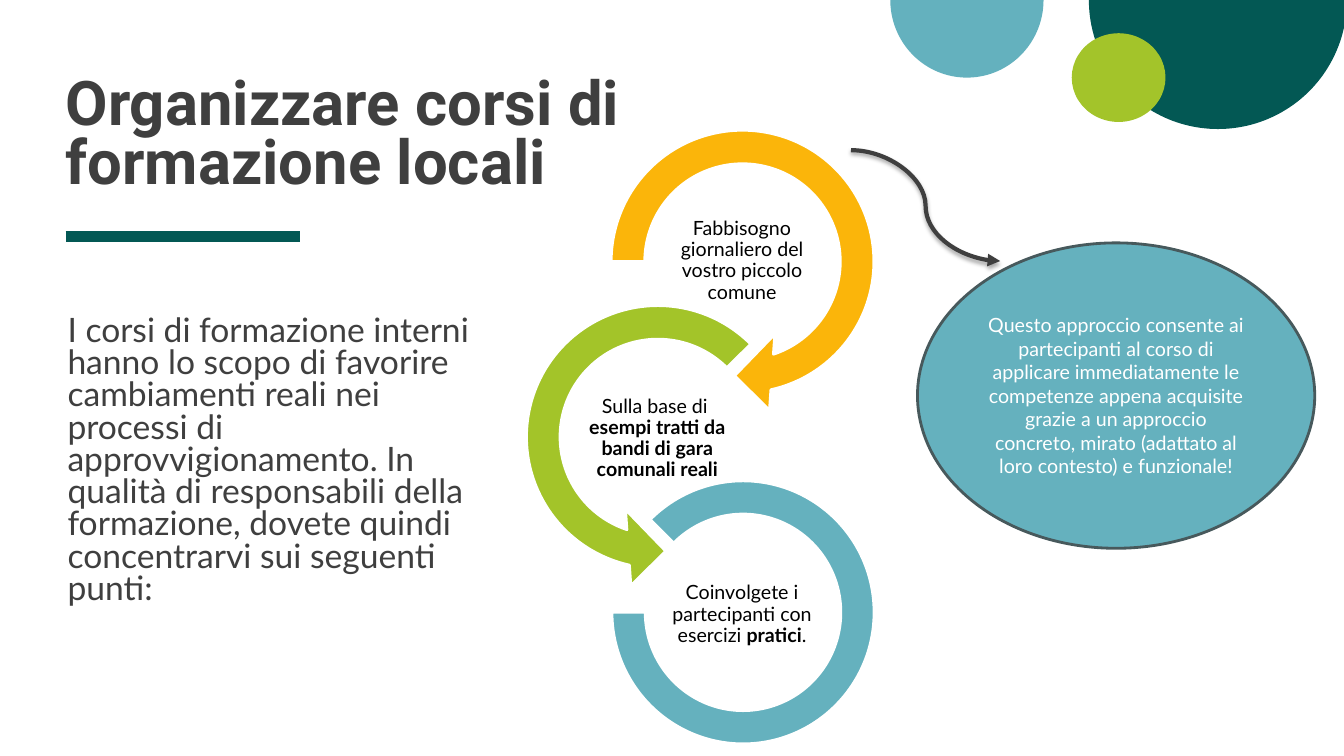
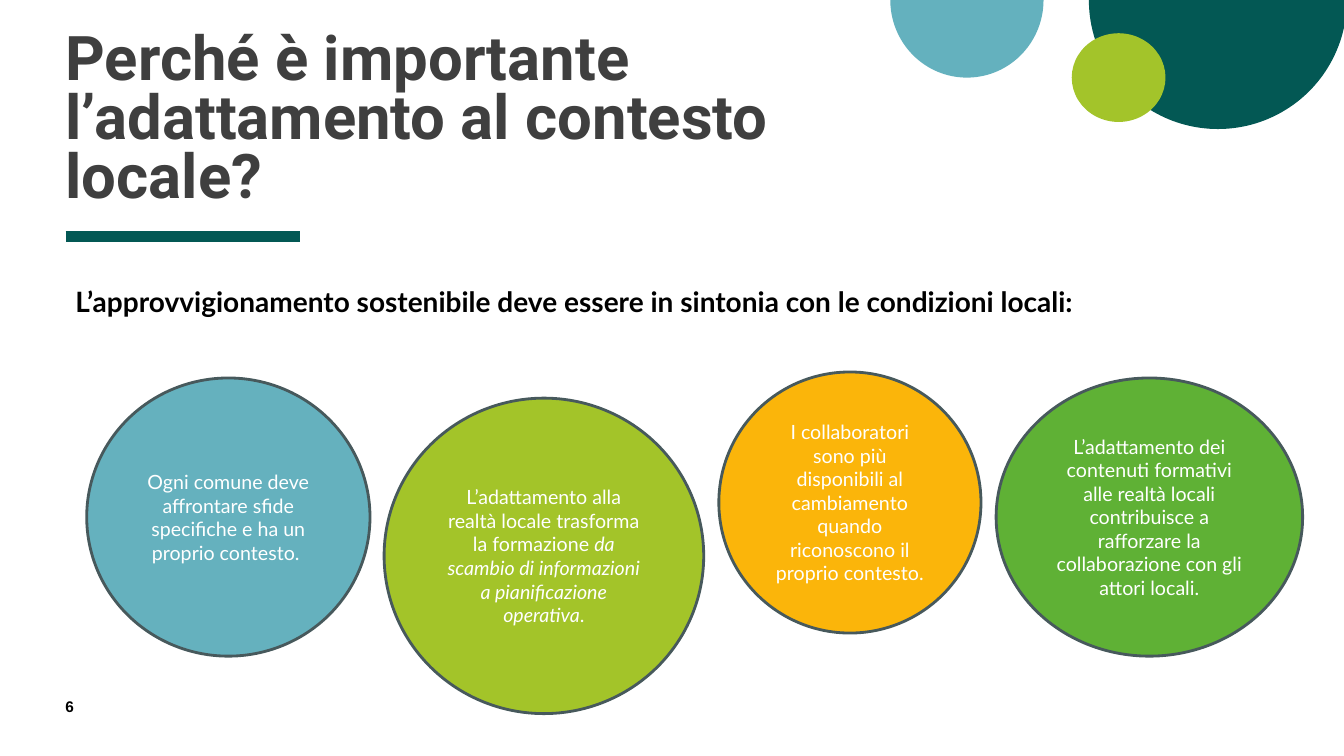
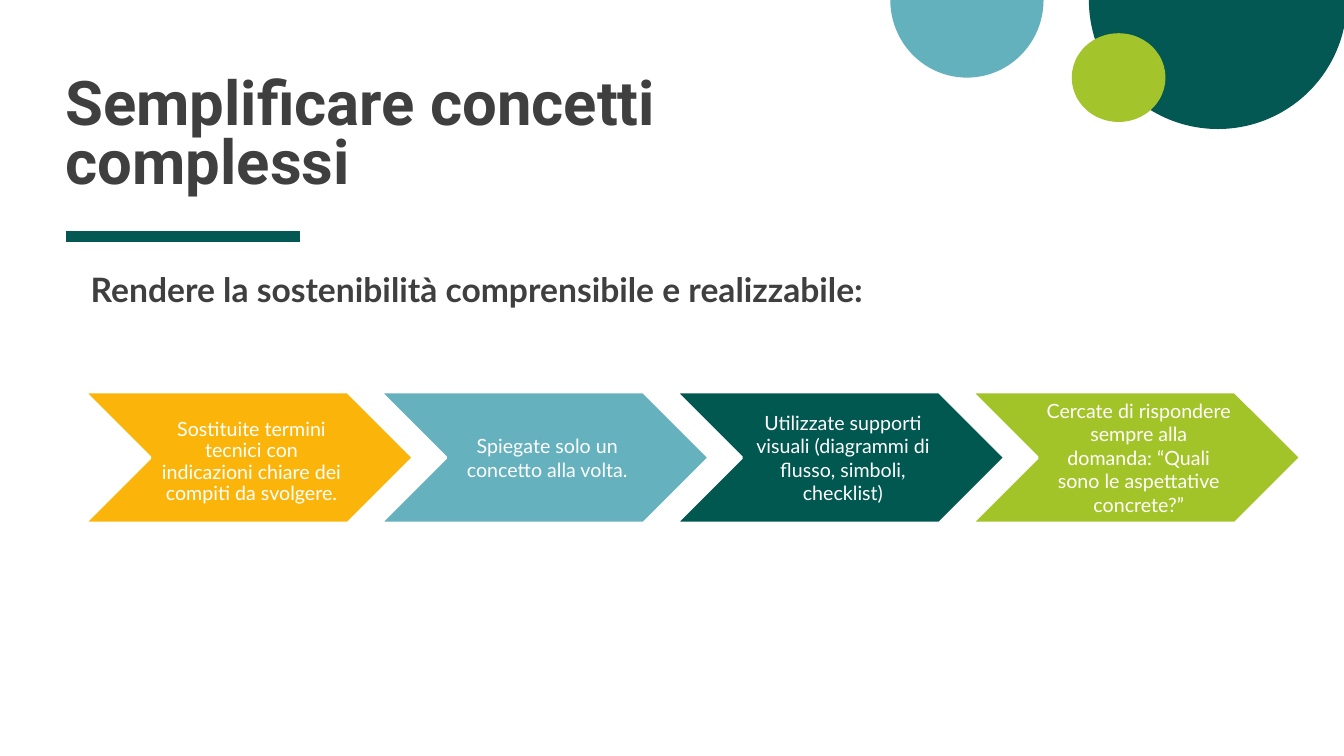
from lxml import etree
from pptx import Presentation
from pptx import util as u
from pptx.dml.color import RGBColor
from pptx.enum import shapes, text
from pptx.oxml.ns import qn

I = u.Inches
G = shapes.MSO_SHAPE
CENTER = text.PP_ALIGN.CENTER
MIDDLE = text.MSO_ANCHOR.MIDDLE
BOTTOM = text.MSO_ANCHOR.BOTTOM
C = {
    "pine": "035854", "sky": "64B1BE", "lime": "A3C42A",
    "dark": "3F3F3F", "black": "000000", "white": "FFFFFF",
    "amber": "FBB50A", "teal": "65B1BE", "olive": "A3C429",
    "green": "5FB135", "forest": "005851", "slate": "47595C",
}


def rgb(name):
    return RGBColor.from_string(C[name])


def write(sp, runs, size, color="dark", font="Lato", bold=None, align=None,
          anchor=text.MSO_ANCHOR.TOP, spacing=None, insets=(0, 0, 0, 0)):
    tf = sp.text_frame
    tf.word_wrap = True
    tf.vertical_anchor = anchor
    tf.margin_left, tf.margin_top, tf.margin_right, tf.margin_bottom = map(I, insets)
    p = tf.paragraphs[0]
    p.alignment = align
    p.line_spacing = spacing
    f = p.font
    f.size, f.name, f.bold = u.Pt(size), font, bold
    f.color.rgb = rgb(color)
    for content, style in [(runs, "")] if isinstance(runs, str) else runs:
        if content == "\n":
            p.add_line_break()
            continue
        r = p.add_run()
        r.text = content
        if style:
            setattr(r.font, style, True)


def label(s, box, runs, size, **style):
    write(s.shapes.add_textbox(*map(I, box)), runs, size, **style)


def shape(s, kind, box, fill, line=None, adj=()):
    sp = s.shapes.add_shape(kind, *map(I, box))
    for i, value in enumerate(adj):
        sp.adjustments[i] = value
    sp.shadow.inherit = False
    sp.fill.solid()
    sp.fill.fore_color.rgb = rgb(fill)
    if line:
        sp.line.color.rgb = rgb(line)
        sp.line.width = u.Pt(2)
    else:
        sp.line.fill.background()
    return sp


def bubble(s, kind, box, fill, runs):
    sp = shape(s, kind, box, fill, "slate")
    write(sp, runs, 14, "white", align=CENTER, anchor=MIDDLE,
          insets=(0.1, 0.05, 0.1, 0.05))


def connector(s, kind, start, end, color, width):
    sp = s.shapes.add_connector(kind, *map(I, start + end))
    sp.line.color.rgb = rgb(color)
    sp.line.width = u.Pt(width)
    effects = etree.SubElement(sp._element.spPr, qn("a:effectLst"))
    return sp, effects


def curved_arrow(s, start, end):
    sp, effects = connector(s, shapes.MSO_CONNECTOR.CURVE, start, end, "dark", 3)
    etree.SubElement(sp._element.spPr.find(qn("a:ln")), qn("a:tailEnd"), type="triangle")
    shadow = etree.SubElement(effects, qn("a:outerShdw"), blurRad=str(u.Pt(3.1)),
                              dist=str(u.Pt(1.8)), dir="5400000", rotWithShape="0")
    clr = etree.SubElement(shadow, qn("a:srgbClr"), val=C["black"])
    etree.SubElement(clr, qn("a:alpha"), val="35000")


def ring_arrow(s, kind, x, y, start, end, fill):
    unit = 0.6
    shape(s, kind, (x, y, 3.03, 3.03), fill, "white",
          (0.11, 19 * unit, end * unit, start * unit, 0.125))


def ring_label(s, x, y, runs):
    label(s, (x, y, 1.68, 0.84), runs, 14, color="black", align=CENTER,
          anchor=MIDDLE, spacing=0.9, insets=(0.01,) * 4)


def body(s, box, content, bold=None):
    label(s, box, content, 24, bold=bold, spacing=0.8, insets=(0.25, 0.25, 0, 0))


def new_slide(prs, title, top=0.21, width=7.42):
    s = prs.slides.add_slide(prs.slide_layouts[6])
    shape(s, G.PIE, (10.8, -1.28, 2.56, 2.56), "pine", adj=(0, 107.96))
    connector(s, shapes.MSO_CONNECTOR.STRAIGHT, (0.65, 2.35), (2.98, 2.35), "pine", 8)
    shape(s, G.PIE, (8.83, -0.77, 1.52, 1.54), "sky", adj=(0, 108.52))
    shape(s, G.OVAL, (10.63, 0.33, 0.93, 0.88), "lime")
    label(s, (0.65, top, width, 1.74), title, 44, font="Roboto", bold=True,
          anchor=BOTTOM, spacing=0.8)
    return s


def courses_slide(prs):
    s = new_slide(prs, "Organizzare corsi di formazione locali", width=5.81)
    body(s, (0.42, 2.89, 4.37, 4.4),
         "I corsi di formazione interni hanno lo scopo di favorire cambiamenti reali "
         "nei processi di approvvigionamento. In qualità di responsabili della "
         "formazione, dovete quindi concentrarvi sui seguenti punti:")
    ring_arrow(s, G.CIRCULAR_ARROW, 5.85, 1.08, 180, 75, "amber")
    ring_label(s, 6.52, 2.17, "Fabbisogno giornaliero del vostro piccolo comune")
    ring_arrow(s, G.LEFT_CIRCULAR_ARROW, 5.01, 2.82, 315, 105, "olive")
    ring_label(s, 5.68, 3.93, [("Sulla base di ", ""), ("\n", ""),
                               ("esempi tratti da bandi di gara comunali reali", "bold")])
    shape(s, G.BLOCK_ARC, (6.07, 4.77, 2.6, 2.61), "teal", "white", (135, 108, 0.127))
    ring_label(s, 6.52, 5.68, [("Coinvolgete i partecipanti con esercizi ", ""),
                               ("pratici", "bold"), (".", "")])
    curved_arrow(s, (8.44, 1.49), (9.92, 2.59))
    bubble(s, G.OVAL, (9.1, 2.41, 3.94, 3.03), "teal",
           "Questo approccio consente ai partecipanti al corso di applicare "
           "immediatamente le competenze appena acquisite grazie a un approccio "
           "concreto, mirato (adattato al loro contesto) e funzionale!")


def context_slide(prs):
    s = new_slide(prs, "Perché è importante l’adattamento al contesto locale?", top=0.35)
    label(s, (0.65, 6.92, 0.57, 0.27), "6", 11, color="black", font="Arial", bold=True)
    label(s, (0.65, 2.77, 12.03, 0.44),
          "L’approvvigionamento sostenibile deve essere in sintonia con le condizioni locali:",
          20, color="black", bold=True, insets=(0.1, 0.05, 0.1, 0.05))
    reasons = [
        ((0.86, 3.75, 2.81, 2.76), "teal",
         "Ogni comune deve affrontare sfide specifiche e ha un proprio contesto. "),
        ((7.13, 3.69, 2.6, 2.59), "amber",
         "I collaboratori sono più disponibili al cambiamento quando riconoscono "
         "il proprio contesto."),
        ((3.81, 3.95, 3.17, 3.13), "olive",
         [("L’adattamento alla realtà locale trasforma la formazione ", ""),
          ("da scambio di informazioni a pianificazione operativa", "italic"), (".", "")]),
        ((9.88, 3.75, 3.04, 2.76), "green",
         "L’adattamento dei contenuti formativi alle realtà locali contribuisce a "
         "rafforzare la collaborazione con gli attori locali."),
    ]
    for box, fill, runs in reasons:
        bubble(s, G.FLOWCHART_CONNECTOR, box, fill, runs)


def concepts_slide(prs):
    s = new_slide(prs, "Semplificare concetti complessi")
    body(s, (0.65, 2.5, 11.2, 1.13),
         "Rendere la sostenibilità comprensibile e realizzabile:", bold=True)
    steps = [
        ("amber", 0.09, 0.9,
         "Sostituite termini tecnici con indicazioni chiare dei compiti da svolgere."),
        ("teal", 0, None, "Spiegate solo un concetto alla volta."),
        ("forest", 0, None,
         "Utilizzate supporti visuali (diagrammi di flusso, simboli, checklist)"),
        ("olive", 0, None,
         "Cercate di rispondere sempre alla domanda: “Quali sono le aspettative concrete?”"),
    ]
    left, top, height, pitch = 0.84, 3.89, 1.3, 8.8 / 3
    for i, (fill, drop, spacing, content) in enumerate(steps):
        x = left + i * pitch
        shape(s, G.CHEVRON, (x, top, 3.26, height), fill, "white", (0.5,))
        label(s, (x + 0.65, top + drop, 1.96, height - drop), content, 14,
              color="white", align=CENTER, anchor=MIDDLE, spacing=spacing,
              insets=(0.08, 0.03, 0.03, 0.03))


def main():
    prs = Presentation()
    prs.slide_width, prs.slide_height = I(13.33), I(7.5)
    courses_slide(prs)
    context_slide(prs)
    concepts_slide(prs)
    prs.save("out.pptx")


if __name__ == "__main__":
    main()
